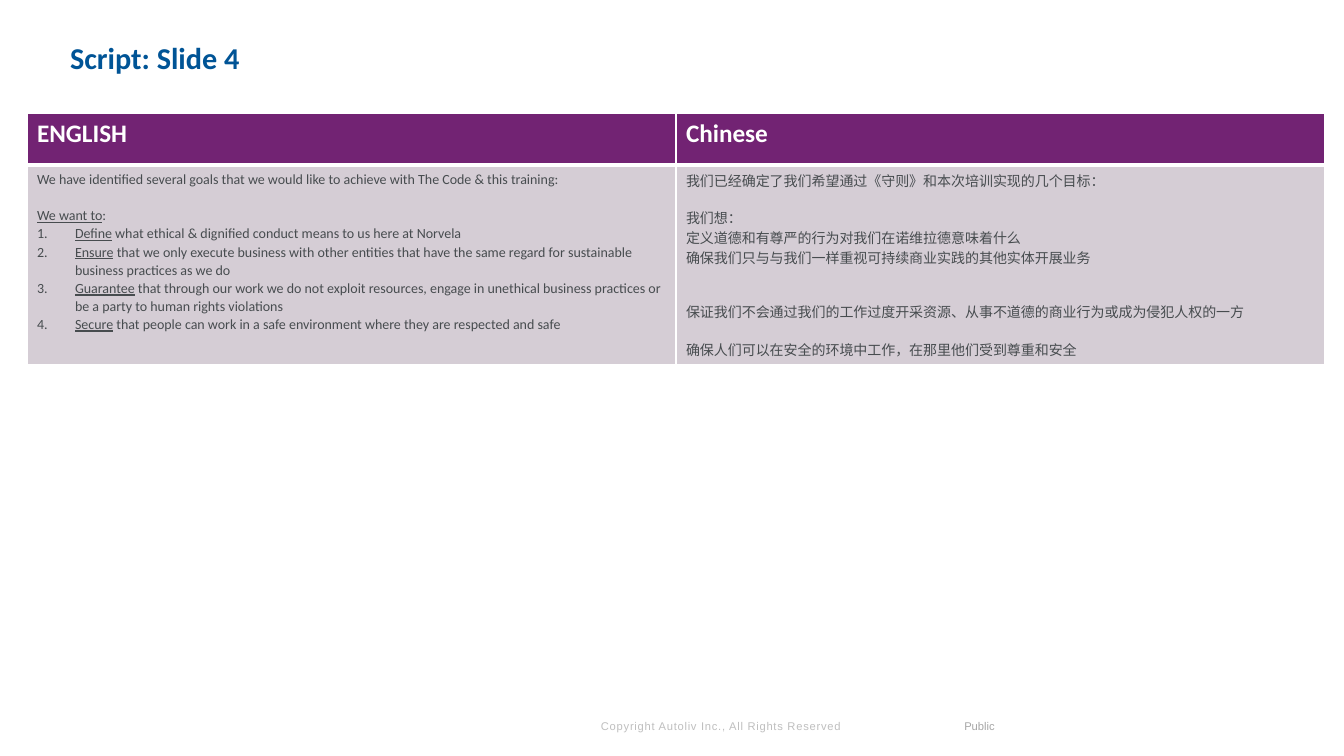
from lxml import etree
from pptx import Presentation
from pptx.dml.color import RGBColor
from pptx.enum.shapes import MSO_SHAPE as Preset
from pptx.enum.text import MSO_ANCHOR as Anchor, MSO_AUTO_SIZE as AutoSize, PP_ALIGN as Align
from pptx.oxml import parse_xml
from pptx.oxml.ns import nsdecls, qn
from pptx.util import Emu, Pt

PX_PER_INCH = 100.8
BLANK_LINE = 12.2
ENGLISH_BLANK_LINE = 13


def px(value):
    return Emu(round(value * 914400 / PX_PER_INCH))


def colour(value):
    return RGBColor.from_string(value)


def add_run(paragraph, text, size=10, font="Calibri", fill="474C4F",
            bold=False, underline=False, spacing=None):
    run = paragraph.add_run()
    run.text = text
    run.font.size = Pt(size)
    run.font.name = font
    run.font.bold = bold
    run.font.underline = underline
    run.font.color.rgb = colour(fill)
    if spacing:
        run.font._element.set("spc", str(spacing))


class SlideBuilder:
    purple = "722373"
    lilac = "D5CDD5"
    white = "FFFFFF"
    blue = "005496"

    def __init__(self, presentation):
        self.slide = presentation.slides.add_slide(presentation.slide_layouts[5])

    def title(self, text, left, top, width, height):
        shape = self.slide.shapes.title
        shape.left, shape.top, shape.width, shape.height = map(px, (left, top, width, height))
        frame = self.frame(shape, Anchor.TOP, (10, 10, 0, 0))
        paragraph = frame.paragraphs[0]
        paragraph.alignment = Align.LEFT
        paragraph.line_spacing = 0.9
        add_run(paragraph, text, size=21.6, fill=self.blue, bold=True)

    def frame(self, shape, anchor, insets):
        frame = shape.text_frame
        frame.word_wrap = True
        frame.auto_size = AutoSize.NONE
        frame.vertical_anchor = anchor
        (frame.margin_left, frame.margin_top,
         frame.margin_right, frame.margin_bottom) = map(px, insets)
        return frame

    def footer(self, text, left, top, width, height):
        shape = self.slide.shapes.add_textbox(*map(px, (left, top, width, height)))
        frame = self.frame(shape, Anchor.BOTTOM, (10, 5, 10, 5))
        add_run(frame.paragraphs[0], text, size=8, font="Arial", fill="BFBFBF", spacing=50)

    def label(self, text, left, top, width, height):
        shape = self.slide.shapes.add_shape(Preset.RECTANGLE, *map(px, (left, top, width, height)))
        shape.shadow.inherit = False
        shape.fill.solid()
        shape.fill.fore_color.rgb = colour(self.white)
        solid_colour = shape._element.spPr.find(".//" + qn("a:srgbClr"))
        etree.SubElement(solid_colour, qn("a:alpha"), val="50000")
        shape.line.fill.background()
        paragraph = self.frame(shape, Anchor.BOTTOM, (0, 0, 0, 0)).paragraphs[0]
        paragraph.alignment = Align.RIGHT
        add_run(paragraph, text, size=8, font="Arial", fill="A6A6A6")

    def table(self, left, top, column_width, row_heights):
        lengths = (left, top, 2 * column_width, sum(row_heights))
        table = self.slide.shapes.add_table(len(row_heights), 2, *map(px, lengths)).table
        table.horz_banding = False
        for row, height in zip(table.rows, row_heights):
            row.height = px(height)
        for column in table.columns:
            column.width = px(column_width)
        for column in range(2):
            self.style_cell(table.cell(0, column), self.purple, top=1, bottom=3)
            self.style_cell(table.cell(1, column), self.lilac, top=3, bottom=1)
        return table

    def style_cell(self, cell, fill, top, bottom):
        cell.fill.solid()
        cell.fill.fore_color.rgb = colour(fill)
        properties = cell._tc.get_or_add_tcPr()
        borders = (("lnL", 1), ("lnR", 1), ("lnT", top), ("lnB", bottom))
        for position, (side, width) in enumerate(borders):
            properties.insert(position, parse_xml(
                f'<a:{side} {nsdecls("a")} w="{Pt(width)}"><a:solidFill>'
                f'<a:srgbClr val="{self.white}"/></a:solidFill></a:{side}>'))

    def heading(self, cell, text):
        add_run(cell.text_frame.paragraphs[0], text, size=18, fill=self.white, bold=True)

    def paragraph(self, cell, runs, space=0, line_spacing=None, numbered=False):
        frame = cell.text_frame
        paragraph = frame.paragraphs[0] if not frame.text else frame.add_paragraph()
        if numbered:
            properties = paragraph._p.get_or_add_pPr()
            properties.set("marL", str(px(38)))
            properties.set("indent", str(-px(38)))
            etree.SubElement(properties, qn("a:buFont"), typeface="+mj-lt")
            etree.SubElement(properties, qn("a:buAutoNum"), type="arabicPeriod")
            tabs = etree.SubElement(properties, qn("a:tabLst"))
            etree.SubElement(tabs, qn("a:tab"), pos=str(px(50)), algn="l")
        if line_spacing:
            paragraph.line_spacing = line_spacing
        if space:
            paragraph.space_before = Pt(space)
        for text, underline in runs:
            add_run(paragraph, text, underline=underline)


GOALS = [
    ("Define", " what ethical & dignified conduct means to us here at Norvela"),
    ("Ensure", " that we only execute business with other entities that have the same regard "
               "for sustainable business practices as we do"),
    ("Guarantee", " that through our work we do not exploit resources, engage in unethical "
                  "business practices or be a party to human rights violations"),
    ("Secure", " that people can work in a safe environment where they are respected and safe"),
]
CHINESE = [
    ("我们已经确定了我们希望通过《守则》和本次培训实现的几个目标：", 0),
    ("我们想：", 1),
    ("定义道德和有尊严的行为对我们在诺维拉德意味着什么", 0),
    ("确保我们只与与我们一样重视可持续商业实践的其他实体开展业务", 0),
    ("保证我们不会通过我们的工作过度开采资源、从事不道德的商业行为或成为侵犯人权的一方", 2),
    ("确保人们可以在安全的环境中工作，在那里他们受到尊重和安全", 1),
]


def main():
    presentation = Presentation()
    presentation.slide_width, presentation.slide_height = px(1344), px(756)
    builder = SlideBuilder(presentation)
    builder.footer("Copyright Autoliv Inc., All Rights Reserved", 591, 715, 274, 23)
    builder.label("Public", 898, 709, 97, 24)
    builder.title("Script: Slide 4", 60, 33, 1232, 109)

    table = builder.table(27, 113, 649, (52, 198))
    for column, language in enumerate(("ENGLISH", "Chinese")):
        builder.heading(table.cell(0, column), language)

    english, chinese = table.cell(1, 0), table.cell(1, 1)
    intro = "We have identified several goals that we would like to achieve with The Code & this training:"
    builder.paragraph(english, [(intro, False)], line_spacing=1.07)
    builder.paragraph(english, [("We want to", True), (":", False)],
                      space=ENGLISH_BLANK_LINE, line_spacing=1.07)
    for verb, goal in GOALS:
        builder.paragraph(english, [(verb, True), (goal, False)], line_spacing=1.07, numbered=True)
    for text, gaps in CHINESE:
        builder.paragraph(chinese, [(text, False)], space=gaps * BLANK_LINE)

    presentation.save("out.pptx")


if __name__ == "__main__":
    main()
